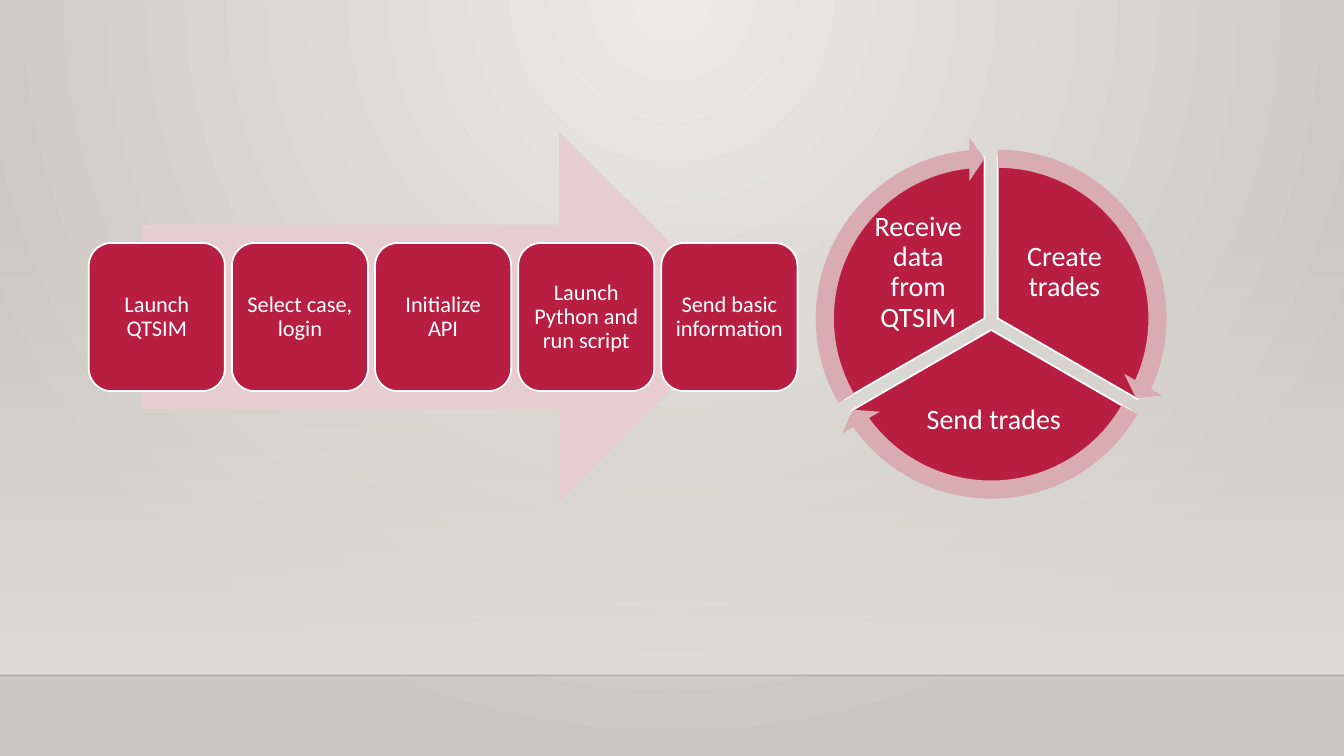
from dataclasses import dataclass
from math import cos, radians, sin

from lxml.etree import SubElement
from pptx import Presentation
from pptx.dml.color import RGBColor
from pptx.dml.fill import FillFormat
from pptx.enum.shapes import MSO_CONNECTOR, MSO_SHAPE
from pptx.enum.text import MSO_ANCHOR, PP_ALIGN
from pptx.oxml import parse_xml
from pptx.oxml.ns import nsdecls, qn
from pptx.shapes.autoshape import Shape
from pptx.shapes.shapetree import GroupShapes
from pptx.slide import Slide
from pptx.util import Pt

COLORS = {
    "crimson": "B71E42",
    "cycle_arrow": "D8ACB0",
    "process_arrow": "E6CDCF",
    "white": "FFFFFF",
    "glow": "ECEAE7",
    "edge": "CAC7C1",
    "wall": "DFDBD5",
    "floor_line": "000001",
}
FONT = "Calibri"
PAGE_WIDTH, PAGE_HEIGHT = 960, 540
FLOOR_TOP = 482.4

CYCLE_CENTER = (708, 230.2)
CYCLE_OFFSET = 5.5
PIE_SIZE, RING_SIZE = 230.4, 259.2
ARROW_HEAD_ANGLE = 3.28
ANGLE_UNIT = 0.6  # one degree in adjustment values

STEPS = ["Launch QTSIM", "Select case, login", "Initialize API",
         "Launch Python and run script", "Send basic information"]
STEP_LEFT, STEP_TOP, STEP_PITCH = 63.4, 173.6, 102.25
STEP_WIDTH, STEP_HEIGHT = 97.2, 105.8


@dataclass(frozen=True)
class Frame:
    left: float
    top: float
    width: float
    height: float

    def lengths(self) -> tuple[Pt, Pt, Pt, Pt]:
        return Pt(self.left), Pt(self.top), Pt(self.width), Pt(self.height)


@dataclass(frozen=True)
class Sector:
    text: str
    start: int
    end: int
    label: Frame

    def square(self, size: float) -> Frame:
        """Square around the sector's centre, pushed out along its middle angle."""
        middle = radians(self.start + 60)
        x = CYCLE_CENTER[0] + CYCLE_OFFSET * cos(middle)
        y = CYCLE_CENTER[1] + CYCLE_OFFSET * sin(middle)
        return Frame(x - size / 2, y - size / 2, size, size)


SECTORS = [
    Sector("Create trades", 270, 30, Frame(719.3, 160.6, 82, 68.4)),
    Sector("Send trades", 30, 150, Frame(648, 270, 123.8, 60.5)),
    Sector("Receive data from QTSIM", 150, 270, Frame(614.9, 160.6, 82, 68.4)),
]


def color(name: str) -> RGBColor:
    return RGBColor.from_string(COLORS[name])


def set_gradient(fill: FillFormat, owner, first: str, last: str,
                 first_alpha: int, direction: str) -> None:
    """Give the fill two stops; direction is the a:lin or a:path element."""
    fill.gradient()
    current = owner.find(".//" + qn("a:gradFill"))
    current.getparent().replace(current, parse_xml(
        f'<a:gradFill {nsdecls("a")} rotWithShape="1"><a:gsLst>'
        f'<a:gs pos="0"><a:srgbClr val="{COLORS[first]}">'
        f'<a:alpha val="{first_alpha}"/></a:srgbClr></a:gs>'
        f'<a:gs pos="100000"><a:srgbClr val="{COLORS[last]}"/></a:gs>'
        f'</a:gsLst>{direction}</a:gradFill>'))


def add_plain_shape(shapes: GroupShapes, kind: MSO_SHAPE, frame: Frame,
                    fill: str, outlined: bool = False) -> Shape:
    shape = shapes.add_shape(kind, *frame.lengths())
    shape.shadow.inherit = False
    shape.fill.solid()
    shape.fill.fore_color.rgb = color(fill)
    if outlined:
        shape.line.color.rgb = color("white")
        shape.line.width = Pt(1.25)
    else:
        shape.line.fill.background()
    return shape


def write_label(box: Shape, text: str, size: float, margin: float) -> None:
    frame = box.text_frame
    frame.word_wrap = True
    frame.vertical_anchor = MSO_ANCHOR.MIDDLE
    frame.margin_left = frame.margin_right = Pt(margin)
    frame.margin_top = frame.margin_bottom = Pt(margin)
    para = frame.paragraphs[0]
    para.alignment = PP_ALIGN.CENTER
    para.line_spacing = 0.9
    span = para.add_run()
    span.text = text
    span.font.name = FONT
    span.font.size = Pt(size)
    span.font.color.rgb = color("white")


def add_backdrop(page: Slide) -> None:
    set_gradient(page.background.fill, page.element, "glow", "edge", 100000,
                 '<a:path path="circle"><a:fillToRect l="43000" t="0" '
                 'r="43000" b="100000"/></a:path>')
    wall_top = 159.1
    wall = add_plain_shape(page.shapes, MSO_SHAPE.RECTANGLE,
                           Frame(0, wall_top, PAGE_WIDTH, FLOOR_TOP - wall_top), "wall")
    set_gradient(wall.fill, wall.element, "wall", "wall", 0,
                 '<a:lin ang="5400000" scaled="0"/>')
    line = page.shapes.add_connector(MSO_CONNECTOR.STRAIGHT, Pt(0), Pt(FLOOR_TOP),
                                     Pt(PAGE_WIDTH), Pt(FLOOR_TOP))
    line.line.color.rgb = color("floor_line")
    line.line.width = Pt(1)
    tint = line.element.spPr.find(".//" + qn("a:srgbClr"))
    SubElement(tint, qn("a:alpha")).set("val", "20000")
    SubElement(line.element.spPr, qn("a:effectLst"))


def add_cycle(shapes: GroupShapes) -> None:
    for sector in SECTORS:
        pie = add_plain_shape(shapes, MSO_SHAPE.PIE, sector.square(PIE_SIZE),
                              "crimson", outlined=True)
        pie.adjustments[0] = sector.start * ANGLE_UNIT
        pie.adjustments[1] = sector.end * ANGLE_UNIT
        label = shapes.add_textbox(*sector.label.lengths())
        write_label(label, sector.text, 20, 2)
    for sector in SECTORS:
        arrow = add_plain_shape(shapes, MSO_SHAPE.CIRCULAR_ARROW,
                                sector.square(RING_SIZE), "cycle_arrow")
        values = (0.05, ARROW_HEAD_ANGLE, sector.end * ANGLE_UNIT - ARROW_HEAD_ANGLE,
                  sector.start * ANGLE_UNIT, 0.06)
        for index, value in enumerate(values):
            arrow.adjustments[index] = value


def add_process(shapes: GroupShapes) -> None:
    add_plain_shape(shapes, MSO_SHAPE.RIGHT_ARROW, Frame(100.8, 94.3, 430.6, 264.2),
                    "process_arrow")
    for index, text in enumerate(STEPS):
        frame = Frame(STEP_LEFT + index * STEP_PITCH, STEP_TOP, STEP_WIDTH, STEP_HEIGHT)
        step = add_plain_shape(shapes, MSO_SHAPE.ROUNDED_RECTANGLE, frame,
                               "crimson", outlined=True)
        write_label(step, text, 16, 4.8)


def main() -> None:
    deck = Presentation()
    deck.slide_width, deck.slide_height = Pt(PAGE_WIDTH), Pt(PAGE_HEIGHT)
    page = deck.slides.add_slide(deck.slide_layouts[6])
    add_backdrop(page)
    add_cycle(page.shapes.add_group_shape().shapes)
    add_process(page.shapes.add_group_shape().shapes)
    deck.save("out.pptx")


if __name__ == "__main__":
    main()
